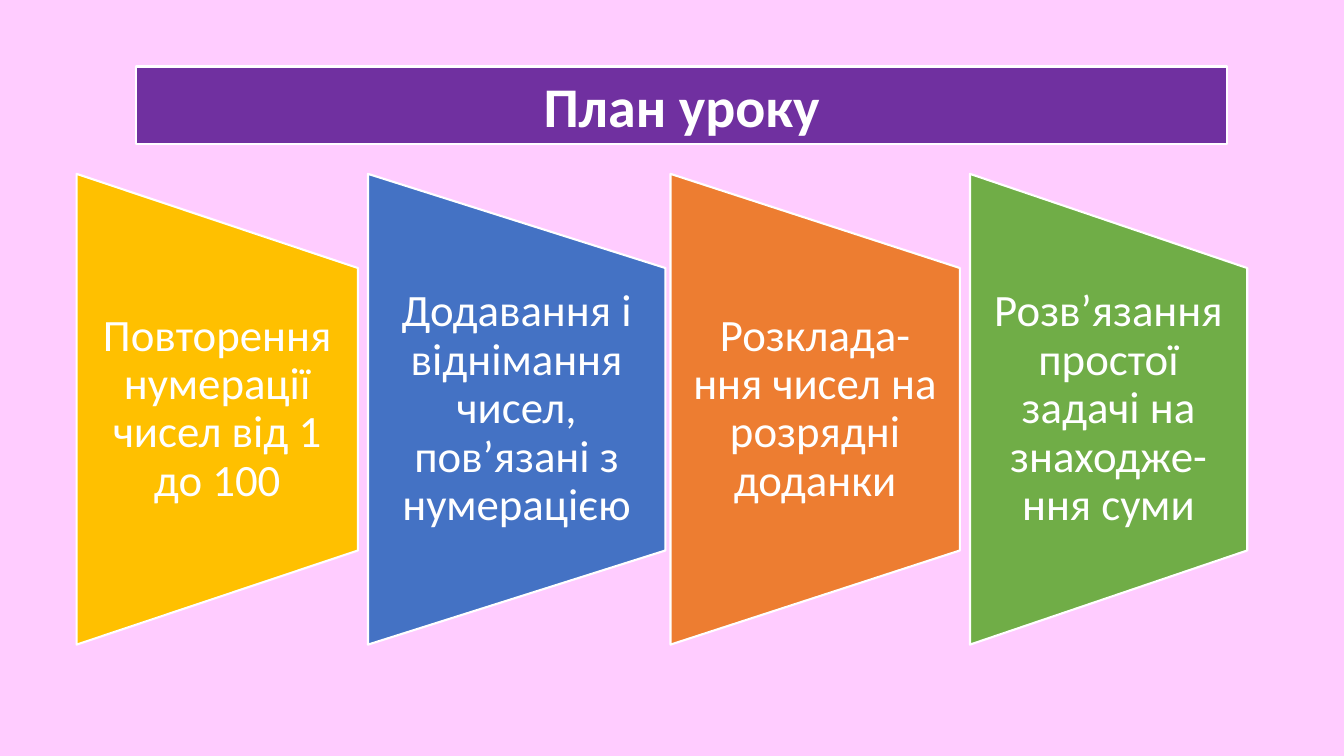
from dataclasses import dataclass

from pptx import Presentation
from pptx.dml.color import RGBColor
from pptx.enum.shapes import MSO_SHAPE
from pptx.enum.text import MSO_ANCHOR, PP_ALIGN
from pptx.shapes.autoshape import Shape
from pptx.slide import Slide
from pptx.util import Inches, Pt

RECT = MSO_SHAPE.RECTANGLE
TRAPEZE = MSO_SHAPE.FLOWCHART_MANUAL_OPERATION
MIDDLE = MSO_ANCHOR.MIDDLE
CENTER = PP_ALIGN.CENTER

PINK = RGBColor(0xFF, 0xCC, 0xFF)
PURPLE = RGBColor(0x70, 0x30, 0xA0)
GOLD = RGBColor(0xFF, 0xC0, 0x00)
BLUE = RGBColor(0x44, 0x72, 0xC4)
ORANGE = RGBColor(0xED, 0x7D, 0x31)
GREEN = RGBColor(0x70, 0xAD, 0x47)
WHITE = RGBColor(0xFF, 0xFF, 0xFF)

WIDE, HIGH = Inches(13.33), Inches(7.5)
COL, ROW = WIDE / 100, HIGH / 100  # a grid of 100 by 100 cells

MID = 54.13  # row of the panels' middle line
TALL = 62.27  # rows from tip to tip of a panel
BODY = 37.33  # rows of a panel's text


@dataclass
class Panel:
    left: float
    width: float
    fill: RGBColor
    text: str


PANELS = [
    Panel(5.7, 20.93, GOLD, "Повторення нумерації чисел від 1 до 100"),
    Panel(27.38, 22.13, BLUE, "Додавання і віднімання чисел, пов’язані з нумерацією"),
    Panel(49.89, 21.53, ORANGE, "Розклада-ння чисел на розрядні доданки"),
    Panel(72.17, 20.63, GREEN, "Розв’язання простої задачі на знаходже-ння суми"),
]


def write(shape: Shape, text: str, *, size: float, bold: bool = False,
          pad: float = 0.1, edge: float = 0, lead: float = 1) -> None:
    """Put white centred text in a shape; pad and edge are insets in inches."""
    frame = shape.text_frame
    frame.word_wrap = True
    frame.vertical_anchor = MIDDLE
    frame.margin_left = frame.margin_right = Inches(pad)
    frame.margin_top = frame.margin_bottom = Inches(edge)
    para = frame.paragraphs[0]
    para.alignment = CENTER
    para.line_spacing = lead
    run = para.add_run()
    run.text = text
    font = run.font
    font.name, font.size, font.bold = "Calibri", Pt(size), bold
    font.color.rgb = WHITE


def draw(slide: Slide, kind: MSO_SHAPE, left: float, top: float,
         width: float, height: float, fill: RGBColor) -> Shape:
    """Add a filled shape with a white outline; lengths are in EMU."""
    shape = slide.shapes.add_shape(
        kind, round(left), round(top), round(width), round(height))
    shape.shadow.inherit = False
    shape.fill.solid()
    shape.fill.fore_color.rgb = fill
    shape.line.color.rgb = WHITE
    shape.line.width = Pt(1.5)
    return shape


def add_panel(slide: Slide, panel: Panel) -> None:
    """Add a trapeze turned on its side, with level text over it."""
    left, width = panel.left * COL, panel.width * COL
    mid, tall, body = MID * ROW, TALL * ROW, BODY * ROW
    shape = draw(slide, TRAPEZE, left + (width - tall) / 2, mid - width / 2,
                 tall, width, panel.fill)
    shape.rotation = 270
    label = slide.shapes.add_textbox(
        round(left), round(mid - body / 2), round(width), round(body))
    write(label, panel.text, size=32, pad=0.22, lead=0.9)


def main() -> None:
    deck = Presentation()
    deck.slide_width, deck.slide_height = WIDE, HIGH
    slide = deck.slides.add_slide(deck.slide_layouts[6])
    slide.background.fill.solid()
    slide.background.fill.fore_color.rgb = PINK

    title = draw(slide, RECT, 10.13 * COL, 8.8 * ROW,
                 81.17 * COL, 10.27 * ROW, PURPLE)
    write(title, "План уроку", size=40, bold=True, edge=0.05)
    for panel in PANELS:
        add_panel(slide, panel)
    deck.save("out.pptx")


if __name__ == "__main__":
    main()
